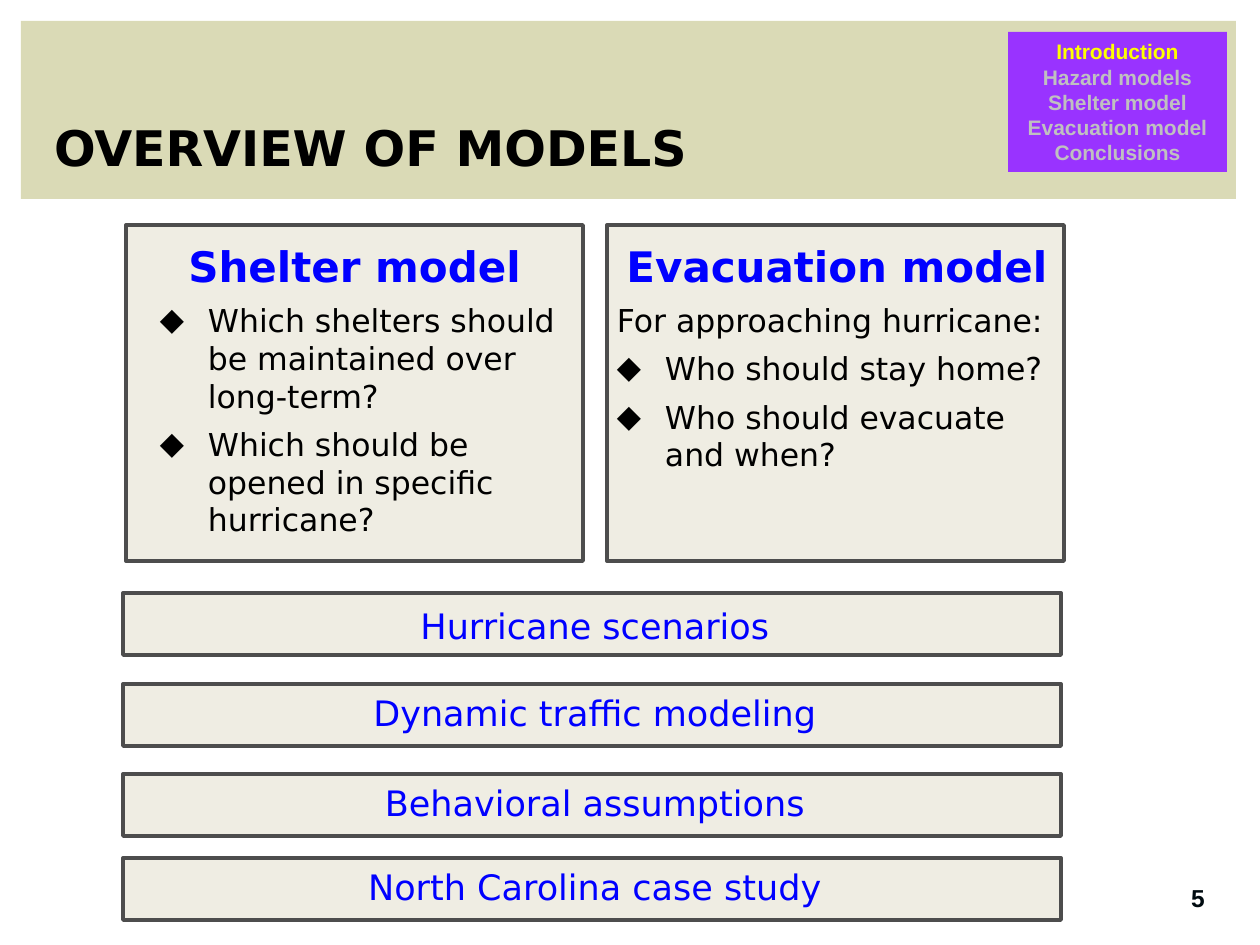
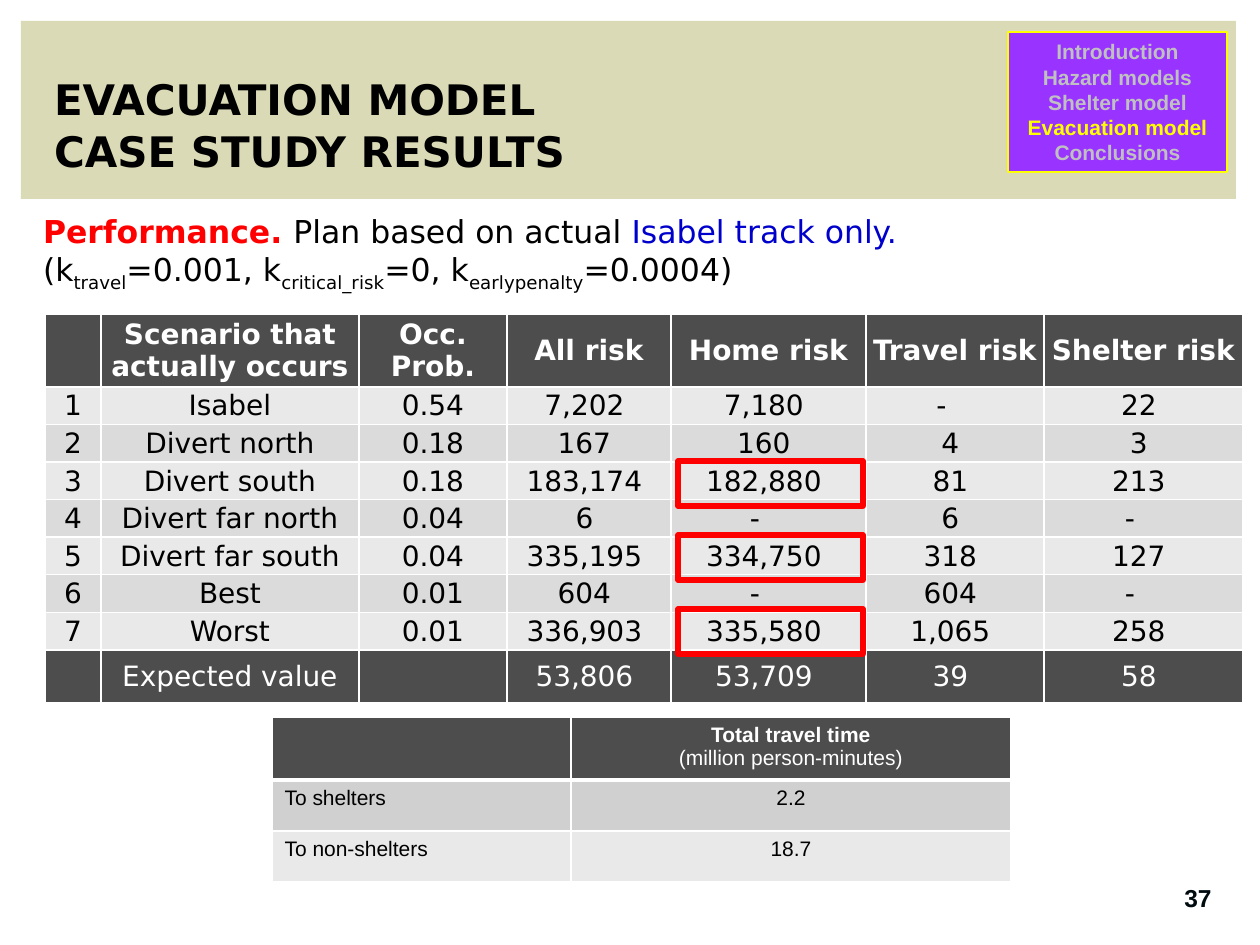
from lxml import etree
from pptx import Presentation
from pptx.dml.color import RGBColor
from pptx.enum.shapes import MSO_SHAPE
from pptx.enum.text import MSO_ANCHOR, PP_ALIGN
from pptx.oxml.ns import qn
from pptx.util import Emu, Pt

RECT = MSO_SHAPE.RECTANGLE
TOP, MIDDLE, BOTTOM = MSO_ANCHOR.TOP, MSO_ANCHOR.MIDDLE, MSO_ANCHOR.BOTTOM
LEFT, CENTER = PP_ALIGN.LEFT, PP_ALIGN.CENTER

BLACK = RGBColor(0x00, 0x00, 0x00)
WHITE = RGBColor(0xFF, 0xFF, 0xFF)
OLIVE = RGBColor(0xDA, 0xDA, 0xB6)
CREAM = RGBColor(0xEF, 0xED, 0xE3)
CHARCOAL = RGBColor(0x4D, 0x4D, 0x4D)
PURPLE = RGBColor(0x99, 0x33, 0xFF)
YELLOW = RGBColor(0xFF, 0xFF, 0x00)
SILVER = RGBColor(0xC0, 0xC0, 0xC0)
BLUE = RGBColor(0x00, 0x00, 0xFF)
DARK_BLUE = RGBColor(0x00, 0x00, 0xCC)
RED = RGBColor(0xFF, 0x00, 0x00)
INK = RGBColor(0x00, 0x0B, 0x10)
ROW_LIGHT = RGBColor(0xE9, 0xE9, 0xE9)
ROW_MID = RGBColor(0xDB, 0xDB, 0xDB)
ROW_DARK = RGBColor(0xD0, 0xD0, 0xD0)

SANS, ARIAL = "DejaVu Sans", "Arial"
SECTIONS = ["Introduction", "Hazard models", "Shelter model",
            "Evacuation model", "Conclusions"]
BULLET_INDENT = 48


def px(n):
    return Emu(round(n * 914400 / 126))


def add_rect(shapes, box, fill=None, line=None, width=2.25):
    s = shapes.add_shape(RECT, *map(px, box))
    s.shadow.inherit = False
    if fill is None:
        s.fill.background()
    else:
        s.fill.solid()
        s.fill.fore_color.rgb = fill
    if line is None:
        s.line.fill.background()
    else:
        s.line.color.rgb = line
        s.line.width = Pt(width)
    return s


def add_text_box(shapes, box, anchor=TOP):
    tf = shapes.add_textbox(*map(px, box)).text_frame
    tf.word_wrap = True
    tf.vertical_anchor = anchor
    set_margins(tf, 0, 0, 0, 0)
    return tf


def set_margins(target, left, top, right, bottom):
    """Set the inner margins of a text frame or a table cell."""
    for side, n in zip(("left", "top", "right", "bottom"),
                       (left, top, right, bottom)):
        setattr(target, f"margin_{side}", px(n))


def add_run(p, text, size, color, font=SANS, bold=False, baseline=0):
    r = p.add_run()
    r.text = text
    for name, value in {"size": Pt(size), "name": font, "bold": bold}.items():
        setattr(r.font, name, value)
    r.font.color.rgb = color
    if baseline:
        r._r.get_or_add_rPr().set("baseline", str(baseline * 1000))


def add_paragraph(tf, text="", size=18, color=BLACK, font=SANS, bold=False,
                  bullet=False, **layout):
    """Fill the first paragraph if it is empty, else add one after it."""
    p = tf.paragraphs[0]
    if p.runs:
        p = tf.add_paragraph()
    for name, value in layout.items():
        setattr(p, name, value)
    if bullet:
        pPr = p._p.get_or_add_pPr()
        pPr.set("marL", str(px(BULLET_INDENT)))
        pPr.set("indent", str(-px(BULLET_INDENT)))
        etree.SubElement(pPr, qn("a:buFont"), typeface=SANS)
        etree.SubElement(pPr, qn("a:buChar"), char="◆")
    if text:
        add_run(p, text, size, color, font, bold)
    return p


def add_frame(prs, title_lines, title_size, section, number, menu_line=None):
    """Add a slide with its title band, section menu and page number."""
    s = prs.slides.add_slide(prs.slide_layouts[6])
    add_rect(s.shapes, (21, 21, 1215, 178), OLIVE)

    tf = add_text_box(s.shapes, (54, 37, 1143, 139), BOTTOM)
    for line in title_lines:
        add_paragraph(tf, line, title_size, bold=True, line_spacing=1.04)

    menu = add_rect(s.shapes, (1008, 32, 219, 140), PURPLE, menu_line, 0.75)
    menu.text_frame.word_wrap = True
    menu.text_frame.vertical_anchor = MIDDLE
    for name in SECTIONS:
        color = YELLOW if name == section else SILVER
        add_paragraph(menu.text_frame, name, 12, color, ARIAL, True,
                      alignment=CENTER)

    tf = add_text_box(s.shapes, (1135, 866, 116, 63), MIDDLE)
    set_margins(tf, 10, 5, 0, 5)
    add_paragraph(tf, str(number), 14, INK, ARIAL, True, alignment=CENTER)
    return s


def add_model_card(s, box, text_box, heading, lines):
    """Lines are pairs of text and whether it takes a bullet."""
    add_rect(s.shapes, box, CREAM, CHARCOAL)
    tf = add_text_box(s.shapes, text_box)
    add_paragraph(tf, heading, 24, BLUE, bold=True, alignment=CENTER,
                  space_after=Pt(6))
    for text, bullet in lines:
        add_paragraph(tf, text, bullet=bullet, space_after=Pt(6))


def add_input_bar(s, box, text, text_drop):
    left, top, width, height = box
    group = s.shapes.add_group_shape()
    add_rect(group.shapes, box, CREAM, CHARCOAL)
    tf = add_text_box(group.shapes,
                      (left + 119, top + text_drop, width - 232, height))
    add_paragraph(tf, text, 20, BLUE, alignment=CENTER)


def set_borders(cell, bottom=1):
    tcPr = cell._tc.get_or_add_tcPr()
    for i, (tag, width) in enumerate(
            {"lnL": 1, "lnR": 1, "lnT": 1, "lnB": bottom}.items()):
        ln = etree.Element(qn(f"a:{tag}"), w=str(Pt(width)))
        fill = etree.SubElement(ln, qn("a:solidFill"))
        etree.SubElement(fill, qn("a:srgbClr"), val=str(WHITE))
        tcPr.insert(i, ln)


def add_plain_table(s, left, top, widths, heights):
    """Add a table without style effects; heights are in EMU."""
    table = s.shapes.add_table(len(heights), len(widths), px(left), px(top),
                               px(sum(widths)), Emu(sum(heights))).table
    table.first_row = table.horz_banding = False
    for col, width in zip(table.columns, widths):
        col.width = px(width)
    for row, height in zip(table.rows, heights):
        row.height = height
    return table


def fill_cell(cell, fill, bottom=1):
    cell.fill.solid()
    cell.fill.fore_color.rgb = fill
    set_borders(cell, bottom)


def add_risk_table(s, left, top):
    rows = [
        ["", "Scenario that actually occurs", "Occ. Prob.", "All risk",
         "Home risk", "Travel risk", "Shelter risk"],
        ["1", "Isabel", "0.54", "7,202", "7,180", "-", "22"],
        ["2", "Divert north", "0.18", "167", "160", "4", "3"],
        ["3", "Divert south", "0.18", "183,174", "182,880", "81", "213"],
        ["4", "Divert far north", "0.04", "6", "-", "6", "-"],
        ["5", "Divert far south", "0.04", "335,195", "334,750", "318", "127"],
        ["6", "Best", "0.01", "604", "-", "604", "-"],
        ["7", "Worst", "0.01", "336,903", "335,580", "1,065", "258"],
        ["", "Expected value", "", "53,806", "53,709", "39", "58"],
    ]
    last = len(rows) - 1
    body_height = Emu(px(263) // (last - 1))
    heights = [px(73)] + [body_height] * (last - 1) + [px(53)]
    table = add_plain_table(s, left, top, (56, 258, 148, 164, 195, 178, 199),
                            heights)
    for i, row in enumerate(rows):
        dark = i in (0, last)
        for j, text in enumerate(row):
            cell = table.cell(i, j)
            fill_cell(cell, CHARCOAL if dark else (ROW_MID, ROW_LIGHT)[i % 2])
            cell.vertical_anchor = MIDDLE
            shift = 0 if i == 0 or j < 3 else 27 if text == "-" else 9
            set_margins(cell, 1, 1, 1 + shift, 0)
            add_paragraph(cell.text_frame, text, 16, WHITE if dark else BLACK,
                          bold=i == 0, alignment=CENTER)


def add_travel_time_table(s, left, top):
    table = add_plain_table(s, left, top, (299, 440), [px(63), px(51), px(51)])
    for j in range(2):
        fill_cell(table.cell(0, j), CHARCOAL, bottom=3)
    tf = table.cell(0, 1).text_frame
    for text, bold in (("Total travel time", True),
                       ("(million person-minutes)", False)):
        add_paragraph(tf, text, 12, WHITE, ARIAL, bold, alignment=CENTER)

    body = [("To shelters", "2.2", ROW_DARK),
            ("To non-shelters", "18.7", ROW_LIGHT)]
    for i, (label, value, fill) in enumerate(body, 1):
        for j, (text, align) in enumerate(((label, LEFT), (value, CENTER))):
            cell = table.cell(i, j)
            fill_cell(cell, fill)
            add_paragraph(cell.text_frame, text, 12, font=ARIAL,
                          alignment=align)


def add_performance_note(s, box):
    tf = add_text_box(s.shapes, box)
    p = add_paragraph(tf)
    add_run(p, "Performance. ", 18, RED, bold=True)
    add_run(p, "Plan based on actual ", 18, BLACK)
    add_run(p, "Isabel track only.", 18, DARK_BLUE)
    p = add_paragraph(tf)
    for text, subscript in (("(k", "travel"), ("=0.001, k", "critical_risk"),
                            ("=0, k", "earlypenalty")):
        add_run(p, text, 18, BLACK)
        add_run(p, subscript, 18, BLACK, baseline=-25)
    add_run(p, "=0.0004)", 18, BLACK)


def add_home_risk_highlights(s, left, top):
    group = s.shapes.add_group_shape()
    for i in range(3):
        add_rect(group.shapes, (left, top + 74 * i, 185, 45), line=RED, width=3)


def build_overview(prs):
    s = add_frame(prs, ["OVERVIEW OF MODELS"], 28, "Introduction", 5)
    add_model_card(s, (126, 225, 457, 336), (160, 240, 404, 306),
                   "Shelter model ",
                   [("Which shelters should be maintained over long-term?", True),
                    ("Which should be opened in specific hurricane?", True)])
    add_model_card(s, (607, 225, 457, 336), (617, 240, 440, 282),
                   "Evacuation model",
                   [("For approaching hurricane:", False),
                    ("Who should stay home?", True),
                    ("Who should evacuate and when?", True)])
    for top, text, text_drop in ((593, "Hurricane scenarios", 12),
                                 (684, "Dynamic traffic modeling", 8),
                                 (774, "Behavioral assumptions", 8),
                                 (858, "North Carolina case study", 8)):
        add_input_bar(s, (123, top, 938, 62), text, text_drop)


def build_results(prs):
    s = add_frame(prs, ["EVACUATION MODEL", "CASE STUDY RESULTS"], 24,
                  "Evacuation model", 37, YELLOW)
    add_performance_note(s, (43, 212, 1217, 97))
    add_risk_table(s, 45, 314)
    add_travel_time_table(s, 272, 717)
    add_home_risk_highlights(s, 678, 461)


def main():
    prs = Presentation()
    prs.slide_width, prs.slide_height = px(1260), px(945)
    build_overview(prs)
    build_results(prs)
    prs.save("out.pptx")


if __name__ == "__main__":
    main()
